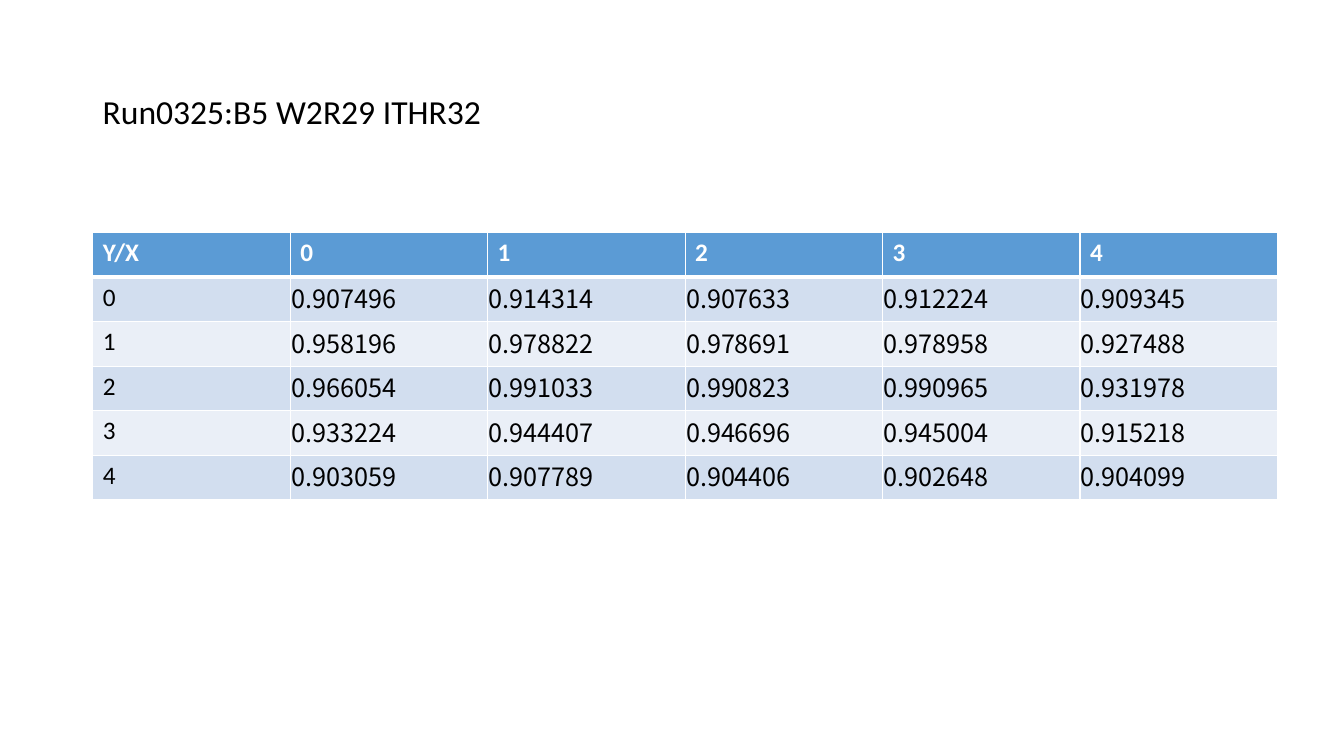
from lxml.etree import SubElement
from pptx import Presentation
from pptx.dml.color import RGBColor
from pptx.enum.text import MSO_ANCHOR
from pptx.oxml.ns import qn
from pptx.util import Inches, Pt

TITLE = "Run0325:B5 W2R29 ITHR32"
X_LABELS = ["0", "1", "2", "3", "4"]
EFFICIENCY_BY_Y = {
    "0": ["0.907496", "0.914314", "0.907633", "0.912224", "0.909345"],
    "1": ["0.958196", "0.978822", "0.978691", "0.978958", "0.927488"],
    "2": ["0.966054", "0.991033", "0.990823", "0.990965", "0.931978"],
    "3": ["0.933224", "0.944407", "0.946696", "0.945004", "0.915218"],
    "4": ["0.903059", "0.907789", "0.904406", "0.902648", "0.904099"],
}
ROWS = [["Y/X", *X_LABELS]] + [[y, *values] for y, values in EFFICIENCY_BY_Y.items()]

LABEL_FONT = "Calibri"
VALUE_FONT = "Noto Sans CJK SC"
WHITE = RGBColor(0xFF, 0xFF, 0xFF)
BLACK = RGBColor(0x00, 0x00, 0x00)
HEADER_BLUE = RGBColor(0x5B, 0x9B, 0xD5)
BANDS = [RGBColor(0xEA, 0xEF, 0xF7), RGBColor(0xD2, 0xDE, 0xEF)]


def add_text(frame, text, size, font, color, bold=False):
    run = frame.paragraphs[0].add_run()
    run.text = text
    run.font.size = Pt(size)
    run.font.name = font
    run.font.color.rgb = color
    run.font.bold = bold


def add_borders(cell, **widths):
    """Draw white cell borders; must run before the fill is set."""
    properties = cell._tc.get_or_add_tcPr()
    for side, width in widths.items():
        line = SubElement(properties, qn(f"a:ln{side}"), w=str(Pt(width)))
        fill = SubElement(line, qn("a:solidFill"))
        SubElement(fill, qn("a:srgbClr"), val=str(WHITE))


def fill_cell(cell, text, row, column):
    is_header = row == 0
    is_value = row > 0 and column > 0
    add_borders(cell, L=1, R=1, T=3 if row == 1 else 1, B=3 if is_header else 1)
    cell.fill.solid()
    cell.fill.fore_color.rgb = HEADER_BLUE if is_header else BANDS[row % 2]
    if is_value:
        cell.vertical_anchor = MSO_ANCHOR.MIDDLE
        cell.margin_left = cell.margin_right = cell.margin_top = Inches(0.01)
        cell.margin_bottom = Inches(0.05)
    add_text(cell.text_frame, text, 18, VALUE_FONT if is_value else LABEL_FONT,
             WHITE if is_header else BLACK, is_header)


def main():
    presentation = Presentation()
    presentation.slide_width = Inches(13.33)
    presentation.slide_height = Inches(7.5)
    slide = presentation.slides.add_slide(presentation.slide_layouts[6])

    title = slide.shapes.add_textbox(
        Inches(0.92), Inches(0.4), Inches(11.5), Inches(1.45)).text_frame
    title.word_wrap = True
    title.vertical_anchor = MSO_ANCHOR.MIDDLE
    title.paragraphs[0].line_spacing = 0.9
    add_text(title, TITLE, 24, LABEL_FONT, BLACK)

    table = slide.shapes.add_table(
        len(ROWS), len(ROWS[0]),
        Inches(0.92), Inches(2.31), Inches(11.75), Inches(2.65)).table
    for row, texts in enumerate(ROWS):
        for column, text in enumerate(texts):
            fill_cell(table.cell(row, column), text, row, column)

    presentation.save("out.pptx")


if __name__ == "__main__":
    main()
